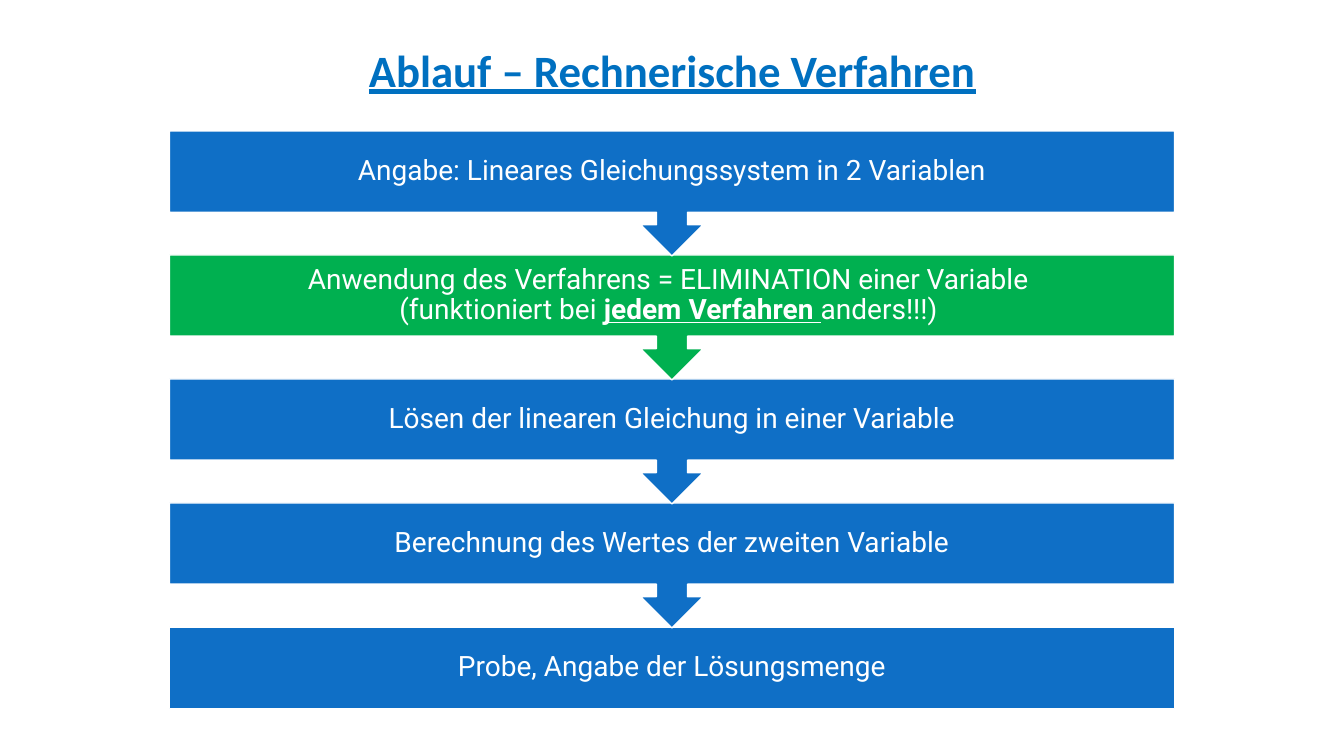
from pptx import Presentation
from pptx.dml.color import RGBColor
from pptx.enum.shapes import MSO_SHAPE as Shape
from pptx.enum.text import MSO_ANCHOR as Anchor, PP_ALIGN as Align
from pptx.util import Inches, Pt

BLUE, GREEN, WHITE, TITLE_BLUE = "0F6FC6", "00B050", "FFFFFF", "0070C0"
LEFT, TOP, WIDTH = 1.68, 1.3, 9.97
PITCH, CALLOUT_HEIGHT, BOX_HEIGHT = 1.23, 1.24, 0.81

EMPHASIS = {"bold": True, "underline": True}
# Each step: fill colour and lines, each line a list of (text, format) spans
STEPS = [
    (BLUE, [[("Angabe: Lineares Gleichungssystem in 2 Variablen", {})]]),
    (GREEN, [
        [("Anwendung des Verfahrens = ELIMINATION einer Variable ", {})],
        [("(funktioniert bei ", {}), ("jedem Verfahren ", EMPHASIS), ("anders!!!) ", {})],
    ]),
    (BLUE, [[("Lösen der linearen Gleichung in einer Variable", {})]]),
    (BLUE, [[("Berechnung des Wertes der zweiten Variable", {})]]),
    (BLUE, [[("Probe, Angabe der Lösungsmenge", {})]]),
]


def color(value):
    return RGBColor.from_string(value)


class FlowPage:
    """Holds the text styles and the slide being drawn."""

    title_style = {"name": "Calibri", "size": Pt(32), "bold": True, "underline": True}
    step_style = {"name": "Roboto", "size": Pt(20)}

    def __init__(self, page):
        self.page = page

    def add_lines(self, para, lines, style, text_color):
        para.alignment = Align.CENTER
        for index, line in enumerate(lines):
            if index:
                para.add_line_break()
            for text, extra in line:
                span = para.add_run()
                span.text = text
                span.font.color.rgb = color(text_color)
                for key, value in {**style, **extra}.items():
                    setattr(span.font, key, value)

    def title(self, text, left, top, width, height):
        box = self.page.shapes.add_textbox(
            Inches(left), Inches(top), Inches(width), Inches(height))
        box.text_frame.word_wrap = True
        self.add_lines(box.text_frame.paragraphs[0], [[(text, {})]],
                       self.title_style, TITLE_BLUE)

    def step(self, kind, top, height, fill, lines):
        box = self.page.shapes.add_shape(
            kind, Inches(LEFT), Inches(top), Inches(WIDTH), Inches(height))
        box.shadow.inherit = False
        box.fill.solid()
        box.fill.fore_color.rgb = color(fill)
        box.line.color.rgb = color(WHITE)
        box.line.width = Pt(1)
        frame = box.text_frame
        frame.word_wrap = True
        frame.vertical_anchor = Anchor.MIDDLE
        for side in ("left", "top", "right", "bottom"):
            setattr(frame, f"margin_{side}", Inches(0.16))
        para = frame.paragraphs[0]
        para.line_spacing = 0.9
        self.add_lines(para, lines, self.step_style, WHITE)


def main():
    deck = Presentation()
    deck.slide_width, deck.slide_height = Inches(13.33), Inches(7.5)
    flow = FlowPage(deck.slides.add_slide(deck.slide_layouts[6]))
    flow.title("Ablauf – Rechnerische Verfahren", 0.34, 0.37, 12.66, 0.64)

    last = len(STEPS) - 1
    for index in range(last, -1, -1):  # upper steps lie in front
        fill, lines = STEPS[index]
        kind, height = ((Shape.RECTANGLE, BOX_HEIGHT) if index == last
                        else (Shape.DOWN_ARROW_CALLOUT, CALLOUT_HEIGHT))
        flow.step(kind, TOP + index * PITCH, height, fill, lines)
    deck.save("out.pptx")


if __name__ == "__main__":
    main()
